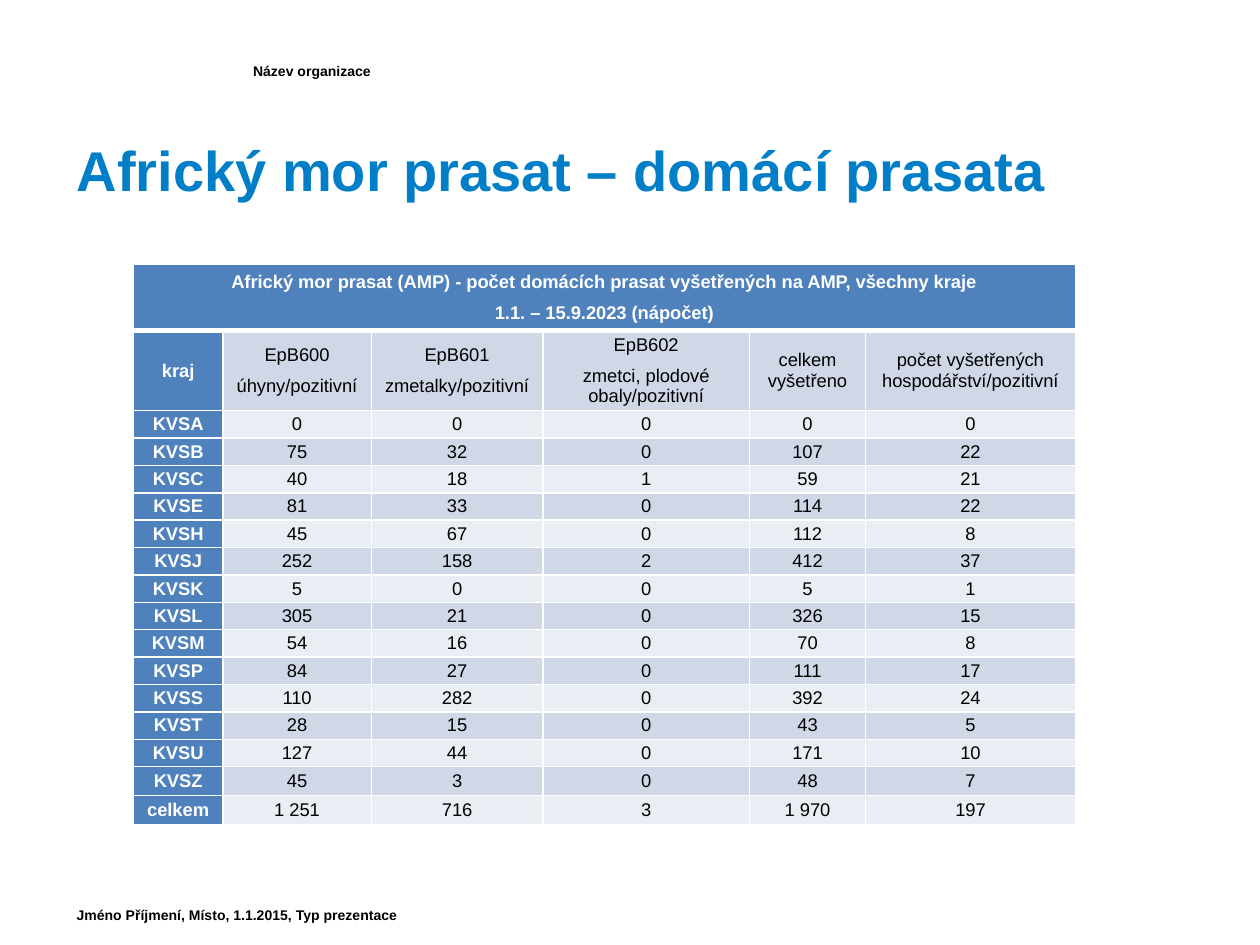
from dataclasses import dataclass
from typing import NamedTuple

from lxml.etree import SubElement
from pptx import Presentation
from pptx.dml.color import RGBColor
from pptx.enum.text import MSO_ANCHOR, PP_ALIGN
from pptx.oxml.ns import qn
from pptx.util import Pt


@dataclass(frozen=True)
class Theme:
    font: str = "Arial"
    title: str = "007EC7"
    text: str = "000000"
    white: str = "FFFFFF"
    head: str = "4F81BD"
    bands: tuple = ("E9EDF4", "D0D8E8")
    title_size: float = 32
    table_size: float = 10.5
    label_size: float = 8


class Box(NamedTuple):
    left: float
    top: float
    width: float
    height: float


class Label(NamedTuple):
    text: str
    box: Box


THEME = Theme()
TITLE = Label("Africký mor prasat – domácí prasata", Box(36.7, 71.3, 647.3, 51.1))
LABELS = [
    Label("Název organizace", Box(137.5, 31.7, 546.5, 17.3)),
    Label("Jméno Příjmení, Místo, 1.1.2015, Typ prezentace", Box(36.7, 514.1, 648, 17.3)),
]

# Table content: a line break separates paragraphs
CAPTION = ("Africký mor prasat (AMP) - počet domácích prasat vyšetřených na AMP, všechny kraje\n"
           "1.1. – 15.9.2023 (nápočet)")
ROWS = [
    ("kraj", "EpB600\núhyny/pozitivní", "EpB601\nzmetalky/pozitivní",
     "EpB602\nzmetci, plodové obaly/pozitivní", "celkem vyšetřeno",
     "počet vyšetřených hospodářství/pozitivní"),
    ("KVSA", "0", "0", "0", "0", "0"),
    ("KVSB", "75", "32", "0", "107", "22"),
    ("KVSC", "40", "18", "1", "59", "21"),
    ("KVSE", "81", "33", "0", "114", "22"),
    ("KVSH", "45", "67", "0", "112", "8"),
    ("KVSJ", "252", "158", "2", "412", "37"),
    ("KVSK", "5", "0", "0", "5", "1"),
    ("KVSL", "305", "21", "0", "326", "15"),
    ("KVSM", "54", "16", "0", "70", "8"),
    ("KVSP", "84", "27", "0", "111", "17"),
    ("KVSS", "110", "282", "0", "392", "24"),
    ("KVST", "28", "15", "0", "43", "5"),
    ("KVSU", "127", "44", "0", "171", "10"),
    ("KVSZ", "45", "3", "0", "48", "7"),
    ("celkem", "1 251", "716", "3", "1 970", "197"),
]
COL_WIDTHS = [51, 84.9, 98, 118.2, 66.2, 120]
ROW_HEIGHTS = [37.8, 45.7] + [15.66] * 13 + [16.5] * 2
TABLE_BOX = Box(76.3, 151.2, sum(COL_WIDTHS), sum(ROW_HEIGHTS))


def set_attrs(obj, values: dict) -> None:
    for name, value in values.items():
        setattr(obj, name, value)


def write_text(tf, text: str, size: float, color: str, bold: bool, align=PP_ALIGN.LEFT) -> None:
    for i, line in enumerate(text.split("\n")):
        p = tf.paragraphs[0] if i == 0 else tf.add_paragraph()
        set_attrs(p, {"alignment": align, "space_before": Pt(6 if i else 0)})
        r = p.add_run()
        r.text = line
        set_attrs(r.font, {"name": THEME.font, "size": Pt(size), "bold": bold})
        r.font.color.rgb = RGBColor.from_string(color)


def place(sp, box: Box) -> None:
    set_attrs(sp, {name: Pt(value) for name, value in box._asdict().items()})


def set_borders(cell, widths: dict[str, float]) -> None:
    tc_pr = cell._tc.get_or_add_tcPr()
    for i, (side, width) in enumerate(widths.items()):
        ln = tc_pr.makeelement(qn(f"a:{side}"), {"w": str(Pt(width))})
        fill = SubElement(ln, qn("a:solidFill"))
        SubElement(fill, qn("a:srgbClr"), val=THEME.white)
        tc_pr.insert(i, ln)


def format_cell(cell, text: str, fill: str, is_head: bool, top: float, bottom: float) -> None:
    set_attrs(cell, {"margin_left": Pt(3.6), "margin_right": Pt(3.6), "margin_top": 0,
                     "margin_bottom": 0, "vertical_anchor": MSO_ANCHOR.MIDDLE})
    cell.fill.solid()
    cell.fill.fore_color.rgb = RGBColor.from_string(fill)
    set_borders(cell, {"lnL": 1, "lnR": 1, "lnT": top, "lnB": bottom})
    if text:
        color = THEME.white if is_head else THEME.text
        write_text(cell.text_frame, text, THEME.table_size, color, is_head, PP_ALIGN.CENTER)


def add_results_table(s) -> None:
    box = [Pt(value) for value in TABLE_BOX]
    table = s.shapes.add_table(len(ROW_HEIGHTS), len(COL_WIDTHS), *box).table
    for col, width in zip(table.columns, COL_WIDTHS):
        col.width = Pt(width)
    for row, height in zip(table.rows, ROW_HEIGHTS):
        row.height = Pt(height)

    # Merged caption row
    table.cell(0, 0).merge(table.cell(0, len(COL_WIDTHS) - 1))
    for j in range(len(COL_WIDTHS)):
        format_cell(table.cell(0, j), "" if j else CAPTION, THEME.head, True, 1, 3)

    # Column names and banded data rows
    for i, values in enumerate(ROWS, start=1):
        for j, value in enumerate(values):
            fill = THEME.bands[i % 2] if j else THEME.head
            format_cell(table.cell(i, j), value, fill, j == 0, 3 if i == 1 else 1, 1)


def main() -> None:
    prs = Presentation()
    set_attrs(prs, {"slide_width": Pt(720), "slide_height": Pt(540)})
    s = prs.slides.add_slide(prs.slide_layouts[5])

    # Header and footer lines
    for label in LABELS:
        sp = s.shapes.add_textbox(*[Pt(value) for value in label.box])
        set_attrs(sp.text_frame, {"word_wrap": True, "vertical_anchor": MSO_ANCHOR.MIDDLE})
        write_text(sp.text_frame, label.text, THEME.label_size, THEME.text, True)

    # Title
    title = s.shapes.title
    place(title, TITLE.box)
    set_attrs(title.text_frame, {"word_wrap": True, "vertical_anchor": MSO_ANCHOR.MIDDLE})
    write_text(title.text_frame, TITLE.text, THEME.title_size, THEME.title, True)

    add_results_table(s)
    prs.save("out.pptx")


if __name__ == "__main__":
    main()
